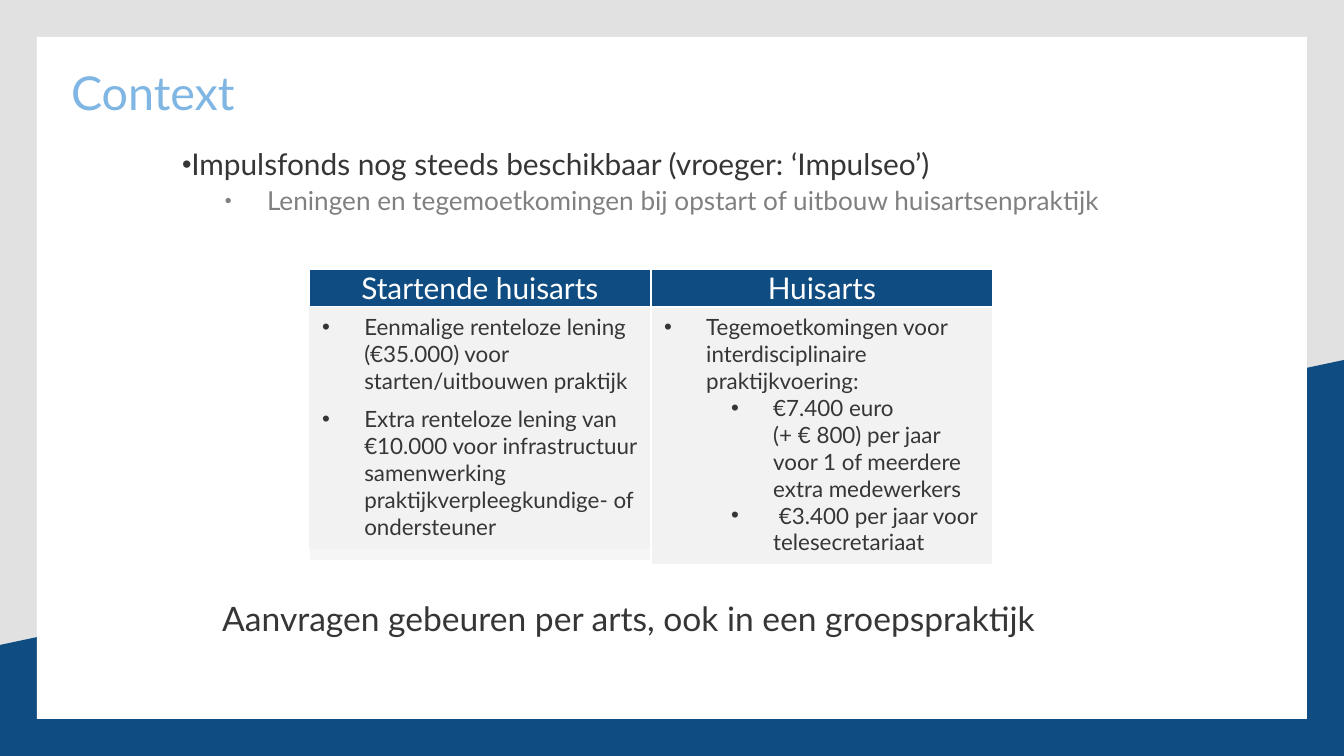
import pptx
import pptx.dml.color
import pptx.enum.shapes
import pptx.enum.text
import pptx.oxml
import pptx.oxml.ns
import pptx.util
from dataclasses import dataclass


@dataclass(frozen=True)
class Theme:
    font: str = "Lato"
    bullet_font: str = "Arial"
    navy: str = "0F4C81"
    sky: str = "80B6E4"
    ink: str = "373636"
    muted: str = "808080"
    white: str = "FFFFFF"
    panel: str = "F2F2F2"
    backdrop: str = "E1E1E1"
    title: int = 25
    closing: int = 18
    lead: int = 16
    detail: int = 14
    cell: int = 12


THEME = Theme()
WIDTH, HEIGHT = 1344, 756

# Content
TITLE = "Context"
INTRO = [
    ("Impulsfonds nog steeds beschikbaar (vroeger: ‘Impulseo’)", 0),
    ("Leningen en tegemoetkomingen bij opstart of uitbouw huisartsenpraktijk", 1),
]
COLUMNS = [
    {"heading": "Startende huisarts", "height": 242, "after": 6, "border": None,
     "items": [
         ("Eenmalige renteloze lening (€35.000) voor starten/uitbouwen praktijk", 0),
         ("Extra renteloze lening van €10.000 voor infrastructuur samenwerking "
          "praktijkverpleegkundige- of ondersteuner", 0)]},
    {"heading": "Huisarts", "height": 258, "after": 0, "border": 0.75,
     "items": [
         ("Tegemoetkomingen voor interdisciplinaire praktijkvoering:", 0),
         ("€7.400 euro \n(+ € 800) per jaar voor 1 of meerdere extra medewerkers", 1),
         (" €3.400 per jaar voor telesecretariaat", 1)]},
]
CLOSING = "Aanvragen gebeuren per arts, ook in een groepspraktijk"

# Layout in px
COLUMN_LEFT, COLUMN_WIDTH = 309, 342
HEADING_TOP, HEADING_HEIGHT = 269, 38
PANEL_TOP, PANEL_HEIGHT = 271, 290
HANG = 42
CELL_INDENTS = (42, 109)

Align = pptx.enum.text.PP_ALIGN
Anchor = pptx.enum.text.MSO_ANCHOR


def px(count):
    return pptx.util.Emu(round(count * 9144000 / WIDTH))


def color(code):
    return pptx.dml.color.RGBColor.from_string(code)


def write(para, text, size, tint):
    for index, line in enumerate(text.split("\n")):
        if index:
            para.add_line_break()
        span = para.add_run()
        span.text = line
        span.font.name = THEME.font
        span.font.size = pptx.util.Pt(size)
        span.font.color.rgb = color(tint)


def add_bullet(para, margin, hang, percent=100):
    properties = para._p.get_or_add_pPr()
    properties.set("marL", str(px(margin)))
    properties.set("indent", str(-px(hang)))
    space = pptx.oxml.ns.nsdecls("a")
    for element in (f'<a:buSzPct {space} val="{percent * 1000}"/>',
                    f'<a:buFont {space} typeface="{THEME.bullet_font}"/>',
                    f'<a:buChar {space} char="•"/>'):
        properties.append(pptx.oxml.parse_xml(element))


def next_para(frame, index):
    return frame.add_paragraph() if index else frame.paragraphs[0]


def clear_insets(frame):
    frame.margin_left = frame.margin_right = 0
    frame.margin_top = frame.margin_bottom = 0


def add_box(page, left, top, width, height, fill, border=None, opacity=None):
    box = page.shapes.add_shape(pptx.enum.shapes.MSO_SHAPE.RECTANGLE,
                                px(left), px(top), px(width), px(height))
    box.shadow.inherit = False
    box.fill.solid()
    box.fill.fore_color.rgb = color(fill)
    if opacity:
        tint = box._element.spPr.find(".//" + pptx.oxml.ns.qn("a:srgbClr"))
        tint.append(pptx.oxml.parse_xml(
            f'<a:alpha {pptx.oxml.ns.nsdecls("a")} val="{opacity * 1000}"/>'))
    if border:
        box.line.color.rgb = color(THEME.white)
        box.line.width = pptx.util.Pt(border)
    else:
        box.line.fill.background()
    box.text_frame.word_wrap = True
    return box


def add_text(page, left, top, width, height):
    frame = page.shapes.add_textbox(px(left), px(top), px(width), px(height)).text_frame
    frame.word_wrap = True
    return frame


def add_backdrop(page):
    page.background.fill.solid()
    page.background.fill.fore_color.rgb = color(THEME.backdrop)
    builder = page.shapes.build_freeform(px(WIDTH), px(360))
    builder.add_line_segments([(px(WIDTH), px(HEIGHT)), (0, px(HEIGHT)), (0, px(645))])
    wedge = builder.convert_to_shape()
    wedge.shadow.inherit = False
    wedge.fill.solid()
    wedge.fill.fore_color.rgb = color(THEME.navy)
    wedge.line.fill.background()
    add_box(page, 37, 37, 1270, 682, THEME.white)


def set_title(page):
    title = page.shapes.title
    # Bring the title in front of the backdrop
    page.shapes._spTree.append(title._element)
    title.left, title.top, title.width, title.height = map(px, (71, 70, 879, 66))
    frame = title.text_frame
    clear_insets(frame)
    frame.vertical_anchor = Anchor.TOP
    para = frame.paragraphs[0]
    para.alignment = Align.LEFT
    para.line_spacing = 0.9
    write(para, TITLE, THEME.title, THEME.sky)


def add_intro(page):
    frame = add_text(page, 182, 150, 1085, 546)
    clear_insets(frame)
    styles = [(0, 0, 90, THEME.lead, THEME.ink), (85, HANG, 75, THEME.detail, THEME.muted)]
    for index, (text, level) in enumerate(INTRO):
        margin, hang, percent, size, tint = styles[level]
        para = next_para(frame, index)
        para.level = level
        add_bullet(para, margin, hang, percent)
        para.line_spacing = 0.9
        if index:
            para.space_before = pptx.util.Pt(3)
        write(para, text, size, tint)


def add_column(page, left, column):
    add_box(page, left, PANEL_TOP, COLUMN_WIDTH, PANEL_HEIGHT, THEME.panel, 1, opacity=65)

    heading = add_box(page, left, HEADING_TOP, COLUMN_WIDTH, HEADING_HEIGHT, THEME.navy, 1)
    heading.text_frame.vertical_anchor = Anchor.MIDDLE
    para = heading.text_frame.paragraphs[0]
    para.alignment = Align.CENTER
    write(para, column["heading"], THEME.lead, THEME.white)

    body = add_box(page, left, HEADING_TOP + HEADING_HEIGHT, COLUMN_WIDTH,
                   column["height"], THEME.panel, column["border"])
    body.text_frame.vertical_anchor = Anchor.TOP
    for index, (text, level) in enumerate(column["items"]):
        para = next_para(body.text_frame, index)
        para.level = level
        para.alignment = Align.LEFT
        add_bullet(para, CELL_INDENTS[level], HANG)
        para.space_after = pptx.util.Pt(column["after"])
        write(para, text, THEME.cell, THEME.ink)


def main():
    deck = pptx.Presentation()
    deck.slide_width, deck.slide_height = px(WIDTH), px(HEIGHT)
    page = deck.slides.add_slide(deck.slide_layouts.get_by_name("Title Only"))

    add_backdrop(page)
    add_intro(page)
    set_title(page)
    for index, column in enumerate(COLUMNS):
        add_column(page, COLUMN_LEFT + index * COLUMN_WIDTH, column)

    # Closing line
    frame = add_text(page, 209, 591, 883, 54)
    write(frame.paragraphs[0], CLOSING, THEME.closing, THEME.ink)
    deck.save("out.pptx")


if __name__ == "__main__":
    main()
